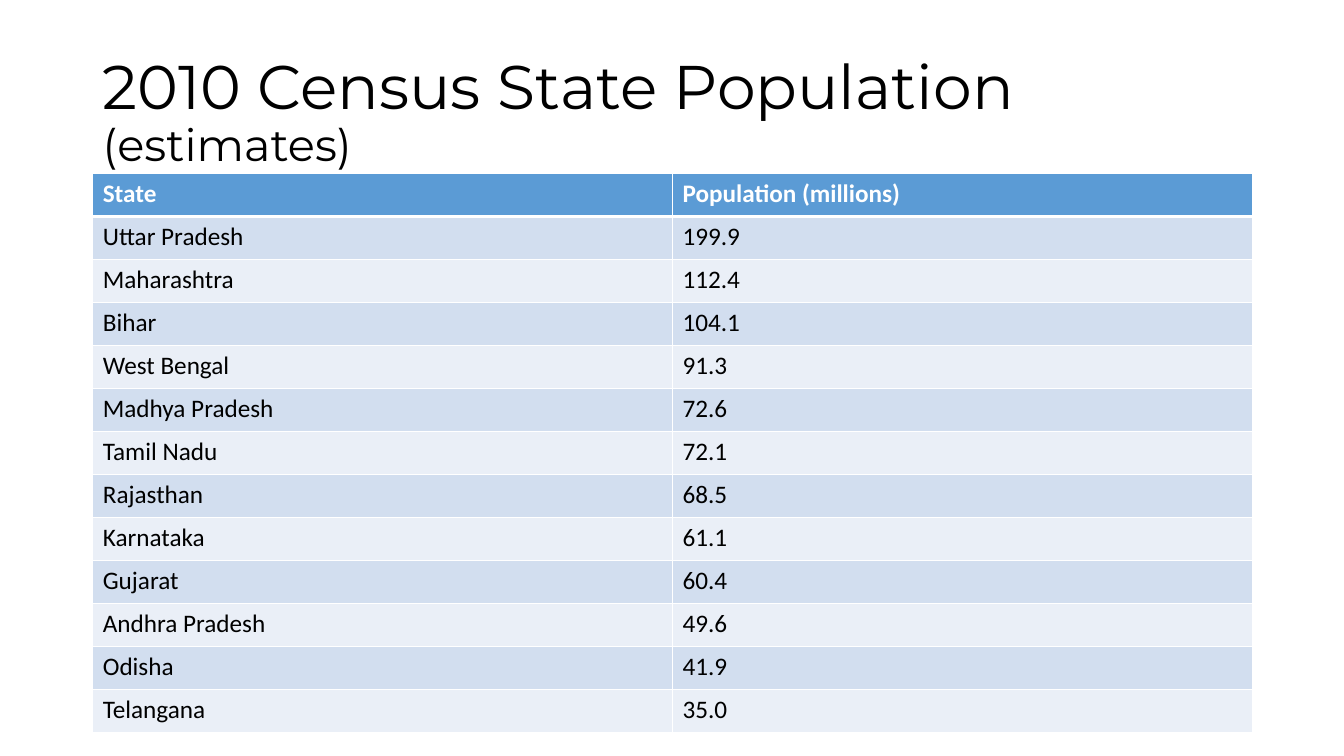
from lxml import etree
from pptx import Presentation
from pptx import util as u
from pptx.dml.color import RGBColor
from pptx.enum import text
from pptx.oxml import ns

PX = 9144
BLACK = RGBColor(0x00, 0x00, 0x00)
WHITE = RGBColor(0xFF, 0xFF, 0xFF)
HEADER_BLUE = RGBColor(0x5B, 0x9B, 0xD5)
BANDS = (RGBColor(0xEA, 0xEF, 0xF7), RGBColor(0xD2, 0xDE, 0xEF))

HEADINGS = ("State", "Population (millions)")
POPULATIONS = (
    ("Uttar Pradesh", "199.9"),
    ("Maharashtra", "112.4"),
    ("Bihar", "104.1"),
    ("West Bengal", "91.3"),
    ("Madhya Pradesh", "72.6"),
    ("Tamil Nadu", "72.1"),
    ("Rajasthan", "68.5"),
    ("Karnataka", "61.1"),
    ("Gujarat", "60.4"),
    ("Andhra Pradesh", "49.6"),
    ("Odisha", "41.9"),
    ("Telangana", "35.0"),
)


def to_emu(box):
    """Turn a box in px into EMU lengths."""
    return [u.Emu(length * PX) for length in box]


def style_run(run, font, size, color, bold=False):
    """Set the font of one run."""
    run.font.name = font
    run.font.size = u.Pt(size)
    run.font.color.rgb = color
    run.font.bold = bold


def add_title(page, box):
    """Write the title with its smaller qualifier."""
    frame = page.shapes.add_textbox(*to_emu(box)).text_frame
    frame.word_wrap = True
    frame.vertical_anchor = text.MSO_ANCHOR.MIDDLE
    para = frame.paragraphs[0]
    para.text = "2010 Census State Population "
    para.line_spacing = 0.9
    para.add_run().text = "(estimates)"
    for run, size in zip(para.runs, (44, 32)):
        style_run(run, "Montserrat", size, BLACK)


def add_borders(cell, top, bottom):
    """Draw white borders around a cell, with widths in points."""
    properties = cell._tc.get_or_add_tcPr()
    for side, width in (("L", 1), ("R", 1), ("T", top), ("B", bottom)):
        line = etree.SubElement(properties, ns.qn(f"a:ln{side}"), w=str(u.Pt(width)))
        fill = etree.SubElement(line, ns.qn("a:solidFill"))
        etree.SubElement(fill, ns.qn("a:srgbClr"), val=str(WHITE))


def add_population_table(page, box):
    """Lay out the header and the banded state rows."""
    rows = (HEADINGS, *POPULATIONS)
    table = page.shapes.add_table(len(rows), len(HEADINGS), *to_emu(box)).table
    for row_index, values in enumerate(rows):
        header = row_index == 0
        top = 3 if row_index == 1 else 1
        bottom = 3 if header else 1
        for column_index, value in enumerate(values):
            cell = table.cell(row_index, column_index)
            cell.text = value
            add_borders(cell, top, bottom)
            cell.fill.solid()
            cell.fill.fore_color.rgb = HEADER_BLUE if header else BANDS[row_index % 2]
            run = cell.text_frame.paragraphs[0].runs[0]
            style_run(run, "Calibri", 18, WHITE if header else BLACK, header)


def main():
    """Build and save the slide."""
    deck = Presentation()
    deck.slide_width, deck.slide_height = to_emu((1333, 750))
    page = deck.slides.add_slide(deck.slide_layouts[6])
    add_title(page, (92, 40, 1150, 145))
    add_population_table(page, (92, 172, 1150, 555))
    deck.save("out.pptx")


if __name__ == "__main__":
    main()
